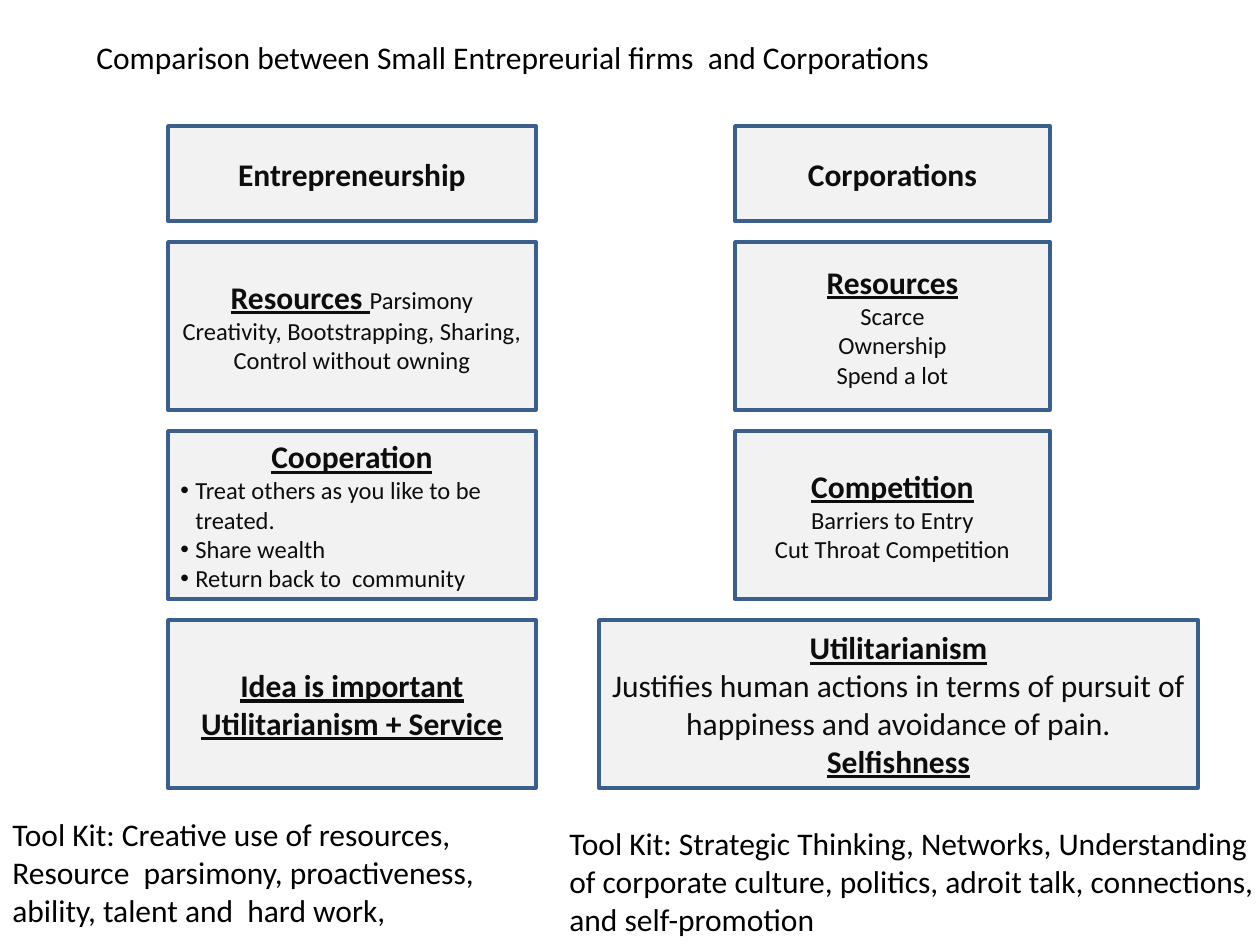
from lxml import etree
from pptx import Presentation
from pptx import util as u
from pptx.dml.color import RGBColor
from pptx.enum import shapes, text
from pptx.oxml.ns import qn


class Theme:
    font = "Calibri"
    fill = RGBColor.from_string("F2F2F2")
    line = RGBColor.from_string("3A5F8C")
    ink = RGBColor.from_string("0D0D0D")
    black = RGBColor.from_string("000000")
    large, small, border = u.Pt(18), u.Pt(14), u.Pt(2)


def px(length):
    return u.Emu(round(length * 914400 / 126))


def add_span(para, words, style, color):
    """Add one run; style is any mix of bold, underline and small."""
    span = para.add_run()
    span.text = words
    span.font.name = Theme.font
    span.font.size = Theme.small if "small" in style else Theme.large
    span.font.color.rgb = color
    span.font.bold = "bold" in style
    span.font.underline = "underline" in style


HEADING = "bold underline"
ROW_TOPS = [126] + [242 + 189 * row for row in range(3)]
ROW_HEIGHTS = [95, 168, 168, 168]
LEFT_COLUMN, RIGHT_COLUMN, WIDE_BOX = (168, 368), (735, 315), (599, 599)

# Each box: row, (left, width), paragraphs; a paragraph is a list of (words, style).
boxes = [
    (0, LEFT_COLUMN, [[("Entrepreneurship", "bold")]]),
    (1, LEFT_COLUMN, [
        [("Resources ", HEADING), ("Parsimony", "small")],
        [("Creativity, Bootstrapping, Sharing, Control without owning", "small")],
    ]),
    (2, LEFT_COLUMN, [
        [("Cooperation", HEADING)],
        [("Treat others as you like to be treated.", "small bullet")],
        [("Share wealth", "small bullet")],
        [("Return back to  community", "small bullet")],
    ]),
    (3, LEFT_COLUMN, [[("Idea is important Utilitarianism + Service", HEADING)]]),
    (0, RIGHT_COLUMN, [[("Corporations", "bold")]]),
    (1, RIGHT_COLUMN, [
        [("Resources", HEADING)],
        [("Scarce", "small")],
        [("Ownership", "small")],
        [("Spend a lot", "small")],
    ]),
    (2, RIGHT_COLUMN, [
        [("Competition", HEADING)],
        [("Barriers to Entry", "small")],
        [("Cut Throat Competition", "small")],
    ]),
    (3, WIDE_BOX, [
        [("Utilitarianism", HEADING)],
        [("Justifies human actions in terms of pursuit of happiness "
          "and avoidance of pain.", "")],
        [("Selfishness", HEADING)],
    ]),
]

captions = [
    (84, 32, 1113, 50,
     "Comparison between Small Entrepreurial firms  and Corporations"),
    (0, 809, 567, 127,
     "Tool Kit: Creative use of resources, Resource  parsimony, proactiveness, "
     "ability, talent and  hard work,"),
    (557, 818, 735, 127,
     "Tool Kit: Strategic Thinking, Networks, Understanding of corporate culture, "
     "politics, adroit talk, connections, and self-promotion"),
]

deck = Presentation()
deck.slide_width, deck.slide_height = px(1260), px(945)
page = deck.slides.add_slide(deck.slide_layouts[6])

for row, (left, width), paragraphs in boxes:
    box = page.shapes.add_shape(
        shapes.MSO_SHAPE.RECTANGLE,
        px(left), px(ROW_TOPS[row]), px(width), px(ROW_HEIGHTS[row]))
    box.shadow.inherit = False
    box.fill.solid()
    box.fill.fore_color.rgb = Theme.fill
    box.line.color.rgb = Theme.line
    box.line.width = Theme.border
    frame = box.text_frame
    frame.word_wrap = True
    frame.vertical_anchor = text.MSO_ANCHOR.MIDDLE
    for index, spans in enumerate(paragraphs):
        para = frame.add_paragraph() if index else frame.paragraphs[0]
        para.alignment = text.PP_ALIGN.CENTER
        for words, style in spans:
            add_span(para, words, style, Theme.ink)
            if "bullet" in style:
                para.alignment = text.PP_ALIGN.LEFT
                properties = para._p.get_or_add_pPr()
                properties.set("marL", str(px(15)))
                properties.set("indent", str(-px(15)))
                etree.SubElement(properties, qn("a:buFont"), typeface="Arial")
                etree.SubElement(properties, qn("a:buChar"), char="•")

for left, top, width, height, words in captions:
    caption = page.shapes.add_textbox(px(left), px(top), px(width), px(height))
    frame = caption.text_frame
    frame.word_wrap = True
    frame.auto_size = text.MSO_AUTO_SIZE.SHAPE_TO_FIT_TEXT
    add_span(frame.paragraphs[0], words, "", Theme.black)

deck.save("out.pptx")
